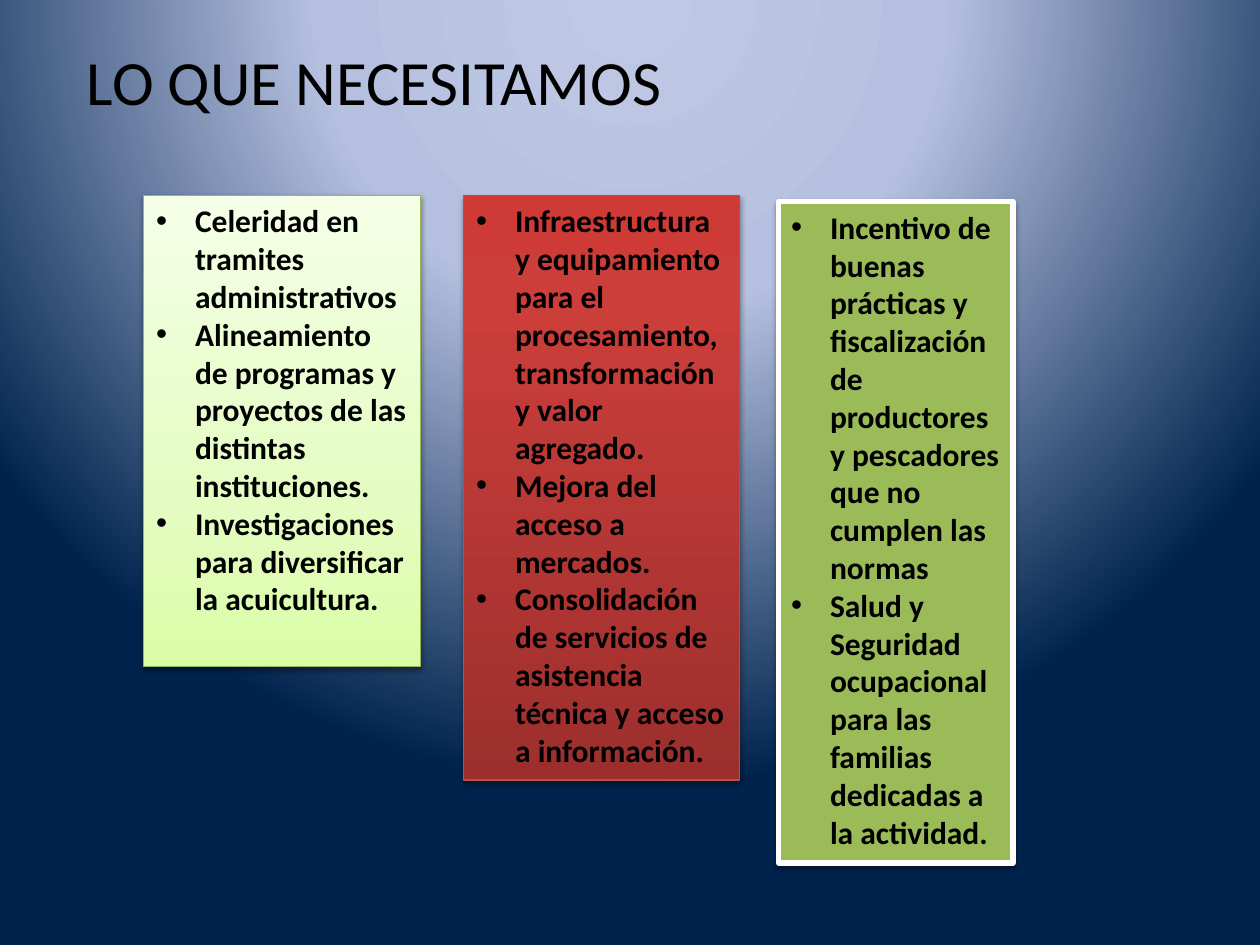
"""Build the slide LO QUE NECESITAMOS with its three columns of needs."""
from lxml import etree
from pptx import Presentation
from pptx.dml.color import RGBColor
from pptx.enum.shapes import MSO_SHAPE
from pptx.enum.text import MSO_ANCHOR, MSO_AUTO_SIZE, PP_ALIGN
from pptx.oxml.ns import qn
from pptx.util import Inches, Pt

RECTANGLE = MSO_SHAPE.RECTANGLE
TOP = MSO_ANCHOR.TOP
NO_FIT = MSO_AUTO_SIZE.NONE
LEFT = PP_ALIGN.LEFT

BLACK = RGBColor(0x00, 0x00, 0x00)
WHITE = RGBColor(0xFF, 0xFF, 0xFF)
OLIVE = RGBColor(0x9B, 0xBB, 0x59)
LIME_LINE = RGBColor(0x98, 0xB9, 0x55)
RED_LINE = RGBColor(0xBF, 0x4C, 0x48)
SKY_STOPS = [(0, RGBColor(0xBF, 0xC9, 0xE5)), (40, RGBColor(0xB5, 0xC0, 0xE0)),
             (100, RGBColor(0x00, 0x23, 0x4D))]
LIME_STOPS = [(0, RGBColor(0xDA, 0xFD, 0xA7)), (35, RGBColor(0xE4, 0xFC, 0xC2)),
              (100, RGBColor(0xF5, 0xFF, 0xE7))]
RED_STOPS = [(0, RGBColor(0x9C, 0x2F, 0x2D)), (80, RGBColor(0xCB, 0x3E, 0x3A)),
             (100, RGBColor(0xCE, 0x3B, 0x37))]


def add_xml(parent, tag, **attributes):
    return etree.SubElement(parent, qn(tag), {k: str(v) for k, v in attributes.items()})


def set_gradient(parent, stops):
    gradient = etree.Element(qn("a:gradFill"), rotWithShape="1")
    stop_list = add_xml(gradient, "a:gsLst")
    for position, color in stops:
        stop = add_xml(stop_list, "a:gs", pos=position * 1000)
        add_xml(stop, "a:srgbClr", val=color)
    parent.replace(parent.find(qn("a:solidFill")), gradient)
    return gradient


prs = Presentation()
prs.slide_width, prs.slide_height = Inches(10), Inches(7.5)
s = prs.slides.add_slide(prs.slide_layouts[5])

s.background.fill.solid()
sky = set_gradient(s.element.find(".//" + qn("p:bgPr")), SKY_STOPS)
glow = add_xml(sky, "a:path", path="circle")
add_xml(glow, "a:fillToRect", l=50000, t=-80000, r=50000, b=180000)

columns = [
    {"box": (1.14, 1.55, 2.2, 3.74), "stops": LIME_STOPS, "line": LIME_LINE,
     "width": 0.75, "alpha": 38, "distance": 1.6,
     "items": ["Celeridad en tramites administrativos",
               "Alineamiento de programas y proyectos de las distintas instituciones.",
               "Investigaciones para diversificar la acuicultura."]},
    {"box": (3.68, 1.55, 2.19, 4.64), "stops": RED_STOPS, "line": RED_LINE,
     "width": 0.75, "alpha": 35, "distance": 1.8,
     "items": ["Infraestructura y equipamiento para el procesamiento, "
               "transformación y valor agregado.",
               "Mejora del acceso a mercados.",
               "Consolidación de servicios de asistencia técnica y acceso a información."]},
    {"box": (6.18, 1.6, 1.86, 5.25), "stops": None, "line": WHITE,
     "width": 3, "alpha": 38, "distance": 1.6,
     "items": ["Incentivo de buenas prácticas y fiscalización de productores y "
               "pescadores que no cumplen las normas",
               "Salud y Seguridad ocupacional para las familias dedicadas a la actividad."]},
]
frame_format = {"word_wrap": True, "auto_size": NO_FIT, "vertical_anchor": TOP}
item_format = {"name": "Calibri", "size": Pt(18), "bold": True}
title_format = {"name": "Calibri", "size": Pt(36), "bold": False}

for column in columns:
    sp = s.shapes.add_shape(RECTANGLE, *map(Inches, column["box"]))
    sp.fill.solid()
    sp.fill.fore_color.rgb = OLIVE
    sp.line.color.rgb = column["line"]
    sp.line.width = Pt(column["width"])
    sp.shadow.inherit = False
    properties = sp.element.spPr
    if column["stops"]:
        add_xml(set_gradient(properties, column["stops"]), "a:lin", ang=270 * 60000, scaled=0)
    shadow = add_xml(properties.find(qn("a:effectLst")), "a:outerShdw", blurRad=Pt(3.1),
                     dist=Pt(column["distance"]), dir=90 * 60000, rotWithShape=0)
    shadow_color = add_xml(shadow, "a:srgbClr", val=BLACK)
    add_xml(shadow_color, "a:alpha", val=column["alpha"] * 1000)

    tf = sp.text_frame
    for name, value in frame_format.items():
        setattr(tf, name, value)
    tf.text = "\n".join(column["items"])
    for p in tf.paragraphs:
        p.alignment = LEFT
        p_pr = p._p.get_or_add_pPr()
        p_pr.set("marL", str(Inches(0.31)))
        p_pr.set("indent", str(-Inches(0.31)))
        add_xml(p_pr, "a:buFont", typeface="Arial")
        add_xml(p_pr, "a:buChar", char="•")
        r = p.runs[0]
        r.font.color.rgb = BLACK
        for name, value in item_format.items():
            setattr(r.font, name, value)

title = s.shapes.title
title.left, title.top, title.width, title.height = map(Inches, (0.59, 0.29, 6.54, 0.71))
tf = title.text_frame
tf.text = "LO QUE NECESITAMOS"
for name, value in frame_format.items():
    setattr(tf, name, value)
p = tf.paragraphs[0]
p.alignment = LEFT
r = p.runs[0]
r.font.color.rgb = BLACK
for name, value in title_format.items():
    setattr(r.font, name, value)

prs.save("out.pptx")
